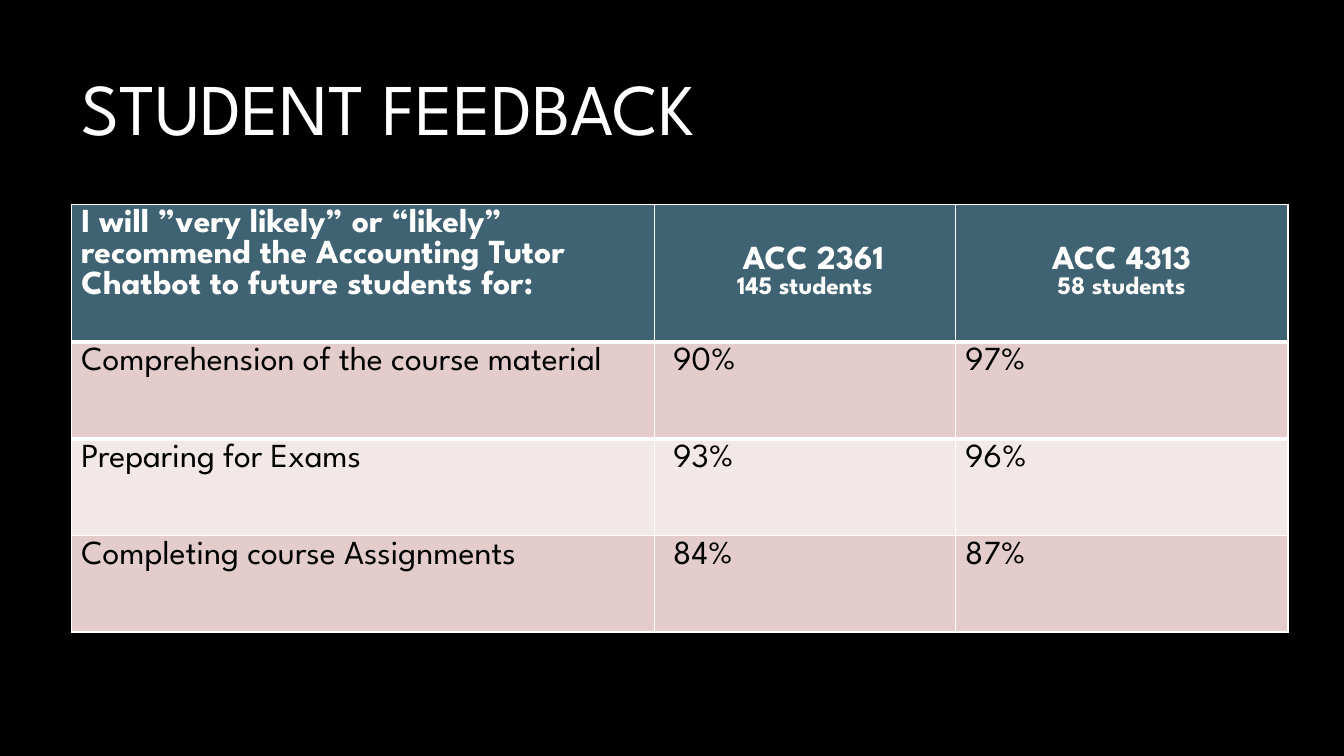
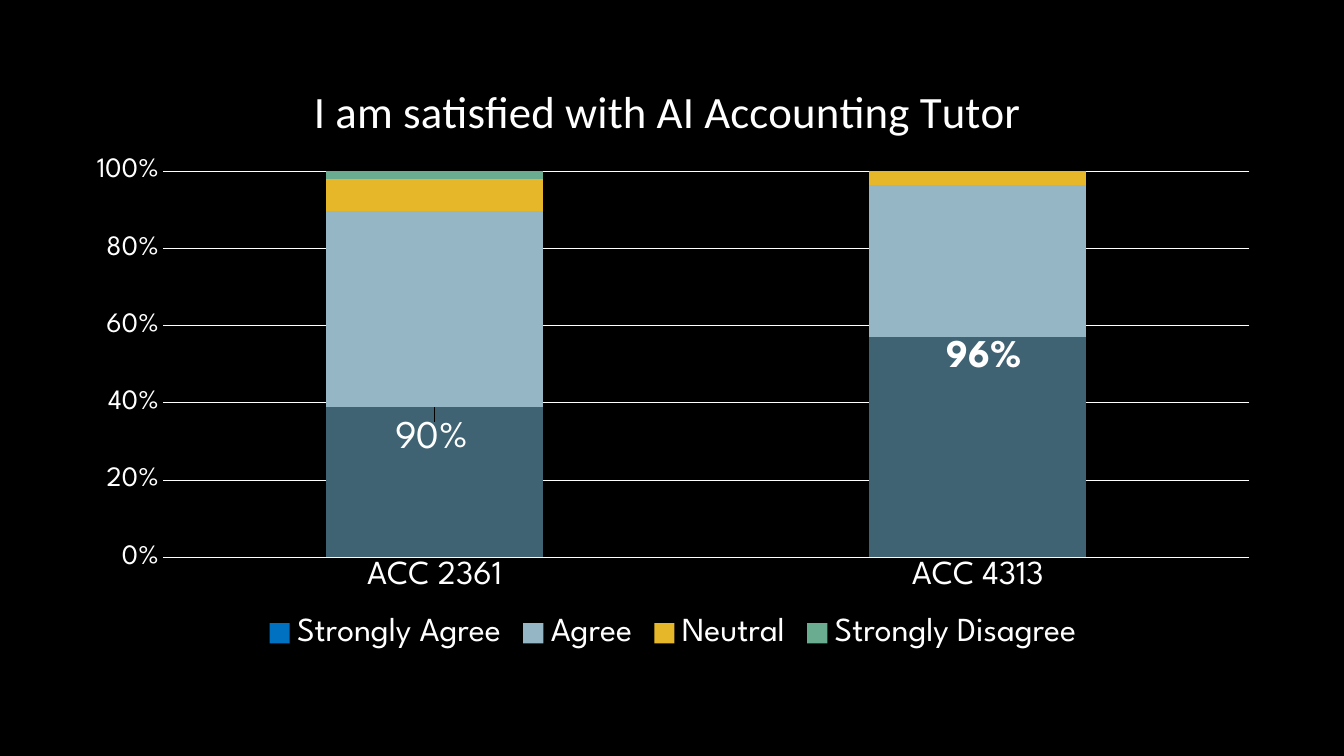
"""Builds two slides on student feedback: a table and a stacked chart."""
import lxml.etree
import pptx
import pptx.chart.data
import pptx.dml.color
import pptx.enum.chart
import pptx.enum.text
import pptx.oxml
import pptx.oxml.ns
import pptx.util

Pt = pptx.util.Pt
qn = pptx.oxml.ns.qn


def colour(value):
    return pptx.dml.color.RGBColor.from_string(value)


class Slides:
    FONT = "League Spartan"
    TITLE_FONT = "Calibri"
    BLACK, WHITE = "000000", "FFFFFF"
    HEADER = "3F6373"
    BANDS = ("E4CCCC", "F2E8E7")
    CHART_SIZE = (857.5, 422.5)

    def __init__(self):
        self.deck = pptx.Presentation()
        self.deck.slide_width, self.deck.slide_height = Pt(960), Pt(540)
        self.page = None

    def add_page(self):
        self.page = self.deck.slides.add_slide(self.deck.slide_layouts[6])
        self.fill(self.page.background, self.BLACK)

    def fill(self, target, value):
        target.fill.solid()
        target.fill.fore_color.rgb = colour(value)

    def style(self, font, size, value=WHITE, bold=False, name=FONT):
        font.name, font.size, font.bold = name, Pt(size), bold
        font.color.rgb = colour(value)

    def line(self, target):
        target.format.line.color.rgb = colour(self.WHITE)
        target.format.line.width = Pt(0.75)

    def title(self, text, left, top, width, height):
        box = self.page.shapes.add_textbox(Pt(left), Pt(top), Pt(width), Pt(height))
        box.text_frame.word_wrap = True
        para = box.text_frame.paragraphs[0]
        para.text = text
        self.style(para.font, 52)

    def border(self, cell, side, width):
        edge = lxml.etree.Element(qn("a:" + side), w=str(Pt(width)))
        solid = lxml.etree.SubElement(edge, qn("a:solidFill"))
        lxml.etree.SubElement(solid, qn("a:srgbClr"), val=self.WHITE)
        properties = cell._tc.get_or_add_tcPr()
        properties.insert(len(properties.findall(qn("a:lnT"))), edge)

    def header_cell(self, cell, lines, indent):
        self.fill(cell, self.HEADER)
        self.border(cell, "lnB", 3)
        cell.text = "\n".join(lines)
        paras = cell.text_frame.paragraphs
        for para, size in zip(paras, (24, 18)):
            self.style(para.font, size, bold=True)
            if len(lines) > 1:
                para.alignment = pptx.enum.text.PP_ALIGN.CENTER
                cell.vertical_anchor = pptx.enum.text.MSO_ANCHOR.MIDDLE
        if indent:
            paras[0]._p.get_or_add_pPr().set("marL", str(Pt(indent)))

    def body_cell(self, cell, text, band):
        self.fill(cell, band)
        cell.text = text
        self.style(cell.text_frame.paragraphs[0].font, 24, self.BLACK)

    def table(self, left, top, widths, heights, header, rows, indents):
        table = self.page.shapes.add_table(
            len(heights), len(widths), Pt(left), Pt(top),
            Pt(sum(widths)), Pt(sum(heights))).table
        for column, width in zip(table.columns, widths):
            column.width = Pt(width)
        for row, height in zip(table.rows, heights):
            row.height = Pt(height)
        for column, (lines, indent) in enumerate(zip(header, indents)):
            self.header_cell(table.cell(0, column), lines, indent)
        for index, row in enumerate(rows):
            for column, text in enumerate(row):
                cell = table.cell(index + 1, column)
                self.body_cell(cell, text, self.BANDS[index % 2])
        for column in range(len(widths)):
            self.border(table.cell(1, column), "lnT", 3)

    def arrange(self, parent, index, inner=False, **places):
        """Gives a chart part a manual layout, from lengths in points."""
        for old in parent.findall(qn("c:layout")):
            parent.remove(old)
        layout = lxml.etree.Element(qn("c:layout"))
        manual = lxml.etree.SubElement(layout, qn("c:manualLayout"))
        settings = {}
        if inner:
            settings["layoutTarget"] = "inner"
        if inner or parent.tag == qn("c:title"):
            settings.update(xMode="edge", yMode="edge")
        width, height = self.CHART_SIZE
        for name, length in places.items():
            settings[name] = length / (width if name in "xw" else height)
        for name, value in settings.items():
            lxml.etree.SubElement(manual, qn("c:" + name)).set("val", str(value))
        parent.insert(index, layout)

    def chart_title(self, chart, text, x, y):
        chart.has_title = True
        para = chart.chart_title.text_frame.paragraphs[0]
        span = para.add_run()
        span.text = text
        self.style(span.font, 32, name=self.TITLE_FONT)
        self.arrange(chart.chart_title._element, 1, x=x, y=y)

    def axes(self, chart):
        kinds = pptx.enum.chart
        for axis, size in ((chart.category_axis, 24), (chart.value_axis, 20)):
            axis.major_tick_mark = axis.minor_tick_mark = kinds.XL_TICK_MARK.NONE
            self.style(axis.tick_labels.font, size)
        self.line(chart.category_axis)
        values = chart.value_axis
        values.format.line.fill.background()
        values.major_unit = 0.2
        self.line(values.major_gridlines)
        values.tick_labels.number_format = "0%"
        values.tick_labels.number_format_is_linked = False

    def series_labels(self, series):
        labels = series.data_labels
        labels.show_value = True
        labels.number_format, labels.number_format_is_linked = "0", False
        self.style(labels.font, 28, bold=True)
        labels._element.append(pptx.oxml.parse_xml(
            '<c:extLst xmlns:c="http://schemas.openxmlformats.org/drawingml/2006/chart">'
            '<c:ext uri="{CE6537A1-D6FC-4f65-9D91-7224C49458BB}" '
            'xmlns:c15="http://schemas.microsoft.com/office/drawing/2012/chart">'
            '<c15:showLeaderLines val="0"/></c:ext></c:extLst>'))

    def point_label(self, point, text, bold, x, y):
        label = point.data_label
        span = label.text_frame.paragraphs[0].add_run()
        span.text = text
        self.style(span.font, 28, bold=bold)
        label.position = pptx.enum.chart.XL_LABEL_POSITION.INSIDE_END
        self.arrange(label._dLbl, 1, x=x, y=y)

    def stacked_chart(self, left, top, categories, series):
        kinds = pptx.enum.chart
        data = pptx.chart.data.CategoryChartData()
        data.categories = categories
        for name, values, _ in series:
            data.add_series(name, values)
        width, height = self.CHART_SIZE
        chart = self.page.shapes.add_chart(
            kinds.XL_CHART_TYPE.COLUMN_STACKED_100, Pt(left), Pt(top),
            Pt(width), Pt(height), data).chart
        self.style(chart.font, 10)
        plot = chart.plots[0]
        plot.gap_width, plot.overlap, plot.vary_by_categories = 150, 100, False
        for item, (_, _, value) in zip(plot.series, series):
            self.fill(item.format, value)
        self.axes(chart)
        chart.has_legend = True
        chart.legend.position = kinds.XL_LEGEND_POSITION.BOTTOM
        chart.legend.include_in_layout = False
        self.style(chart.legend.font, 24)
        area = chart._chartSpace.chart.plotArea
        self.arrange(area, 0, inner=True, x=64.5, y=76.75, w=776, h=276)
        return chart


def feedback_page(slides):
    slides.add_page()
    slides.title("STUDENT FEEDBACK", 51, 41, 854, 105)
    slides.table(
        51, 146, (416.75, 214.5, 237.75), (98.5, 69, 69, 69),
        (("I will ”very likely” or “likely” recommend the Accounting Tutor "
          "Chatbot to future students for:",),
         ("ACC 2361", "145 students"),
         ("ACC 4313", "58 students")),
        (("Comprehension of the course material", " 90%", "97%"),
         ("Preparing for Exams", " 93%", "96%"),
         ("Completing course Assignments", " 84%", "87%")),
        indents=(0, 12, 0))


def satisfaction_page(slides):
    slides.add_page()
    chart = slides.stacked_chart(
        52, 45.5, ("ACC 2361", "ACC 4313"),
        (("Strongly Agree", (56, 32), "0070C0"),
         ("Agree", (73, 22), "95B6C5"),
         ("Neutral", (12, 2), "E6B729"),
         ("Strongly Disagree", (3, 0), "6AAC90")))
    slides.chart_title(chart, "I am satisfied with AI Accounting Tutor", 166.5, 6)
    series = chart.plots[0].series[0]
    slides.series_labels(series)
    labels = (("90%", False, -2, 7.5), ("96%", True, 4.25, 0))
    for index, label in enumerate(labels):
        slides.fill(series.points[index].format, slides.HEADER)
        slides.point_label(series.points[index], *label)


def main():
    slides = Slides()
    feedback_page(slides)
    satisfaction_page(slides)
    slides.deck.save("out.pptx")


if __name__ == "__main__":
    main()
